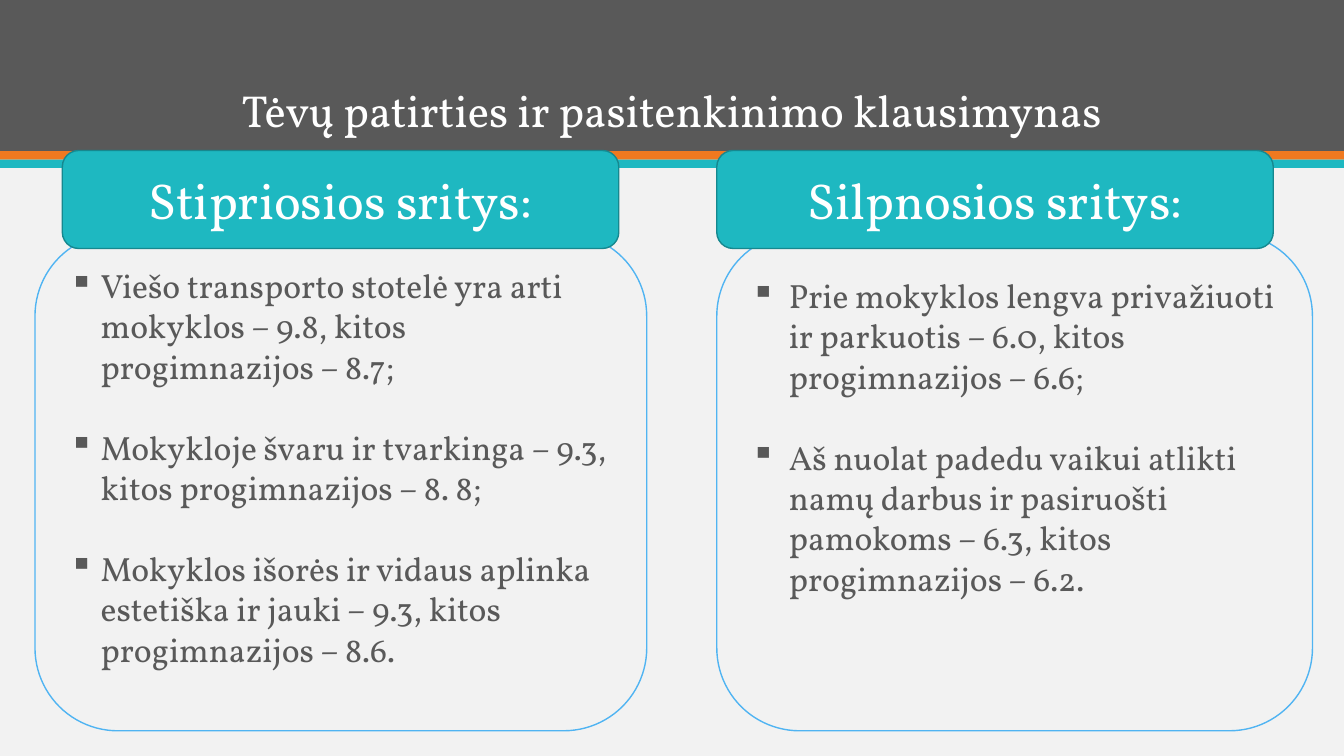
from lxml.etree import SubElement
from pptx import Presentation
from pptx.dml.color import RGBColor
from pptx.enum.shapes import MSO_SHAPE as SHAPE
from pptx.enum.text import MSO_ANCHOR as ANCHOR, MSO_AUTO_SIZE as AUTO_SIZE, PP_ALIGN as ALIGN
from pptx.oxml.ns import qn
from pptx.util import Pt

COLORS = {
    name: RGBColor.from_string(value)
    for name, value in {
        "background": "F2F2F2",
        "gray": "595959",
        "orange": "EF7920",
        "teal": "1EB8C1",
        "dark teal": "16888F",
        "blue": "50B4F2",
        "white": "FFFFFF",
    }.items()
}

COLUMNS = [
    # heading, heading left, panel left, panel width, bullet indent, bottom inset, items
    ("Silpnosios sritys:", 512, 512, 425.5, 27, 68.5, [
        "Prie mokyklos lengva privažiuoti ir parkuotis – 6.0, kitos progimnazijos – 6.6;",
        "Aš nuolat padedu vaikui atlikti namų darbus ir pasiruošti pamokoms – 6.3, "
        "kitos progimnazijos – 6.2.",
    ]),
    ("Stipriosios sritys:", 44.5, 25, 437, 22.5, 25, [
        "Viešo transporto stotelė yra arti mokyklos – 9.8, kitos progimnazijos – 8.7;",
        "Mokykloje švaru ir tvarkinga – 9.3, kitos progimnazijos – 8. 8;",
        "Mokyklos išorės ir vidaus aplinka estetiška ir jauki – 9.3, kitos progimnazijos – 8.6.",
    ]),
]


def add_box(kind, left, top, width, height, fill=None, line=None):
    box = page.shapes.add_shape(kind, Pt(left), Pt(top), Pt(width), Pt(height))
    box.shadow.inherit = False
    if fill:
        box.fill.solid()
        box.fill.fore_color.rgb = COLORS[fill]
    else:
        box.fill.background()
    if line:
        box.line.color.rgb = COLORS[line]
        box.line.width = Pt(1)
    else:
        box.line.fill.background()
    return box


def write(para, text, size, color, align):
    para.text = text
    para.alignment = align
    para.font.name = "Vollkorn"
    para.font.size = Pt(size)
    para.font.color.rgb = COLORS[color]


deck = Presentation()
deck.slide_width, deck.slide_height = Pt(960), Pt(540)
page = deck.slides.add_slide(deck.slide_layouts[5])
page.background.fill.solid()
page.background.fill.fore_color.rgb = COLORS["background"]

# Header bands
for top, height, color in [(0, 108, "gray"), (108, 6, "orange"), (114, 6, "teal")]:
    add_box(SHAPE.RECTANGLE, 0, top, 960, height, color)

# Title, in front of the bands
title = page.shapes.title
title.element.getparent().append(title.element)
title.left, title.top, title.width, title.height = Pt(102), Pt(20), Pt(756), Pt(81.5)
title.text_frame.auto_size = AUTO_SIZE.NONE
title.text_frame.vertical_anchor = ANCHOR.BOTTOM
heading = title.text_frame.paragraphs[0]
write(heading, "Tėvų patirties ir pasitenkinimo klausimynas", 32, "white", ALIGN.CENTER)
heading.line_spacing = 0.9

# Panels with bulleted findings, each under its heading
for name, name_left, left, width, indent, bottom_inset, items in COLUMNS:
    panel = add_box(SHAPE.ROUNDED_RECTANGLE, left, 166.5, width, 355.5, line="blue")
    frame = panel.text_frame
    frame.vertical_anchor = ANCHOR.MIDDLE
    frame.margin_bottom = Pt(bottom_inset)
    for index, item in enumerate(items):
        para = frame.add_paragraph() if index else frame.paragraphs[0]
        write(para, item, 24, "gray", ALIGN.LEFT)
        if index:
            para.space_before = Pt(29)
        properties = para._p.get_or_add_pPr()
        properties.set("marL", str(Pt(indent)))
        properties.set("indent", str(-Pt(indent)))
        bullet = SubElement(properties, qn("a:buChar"))
        bullet.set("char", "▪")
        properties.find(qn("a:defRPr")).addprevious(bullet)

    label = add_box(SHAPE.ROUNDED_RECTANGLE, name_left, 107.5, 397.5, 70, "teal", "dark teal")
    label.text_frame.vertical_anchor = ANCHOR.MIDDLE
    write(label.text_frame.paragraphs[0], name, 36, "white", ALIGN.CENTER)

deck.save("out.pptx")
